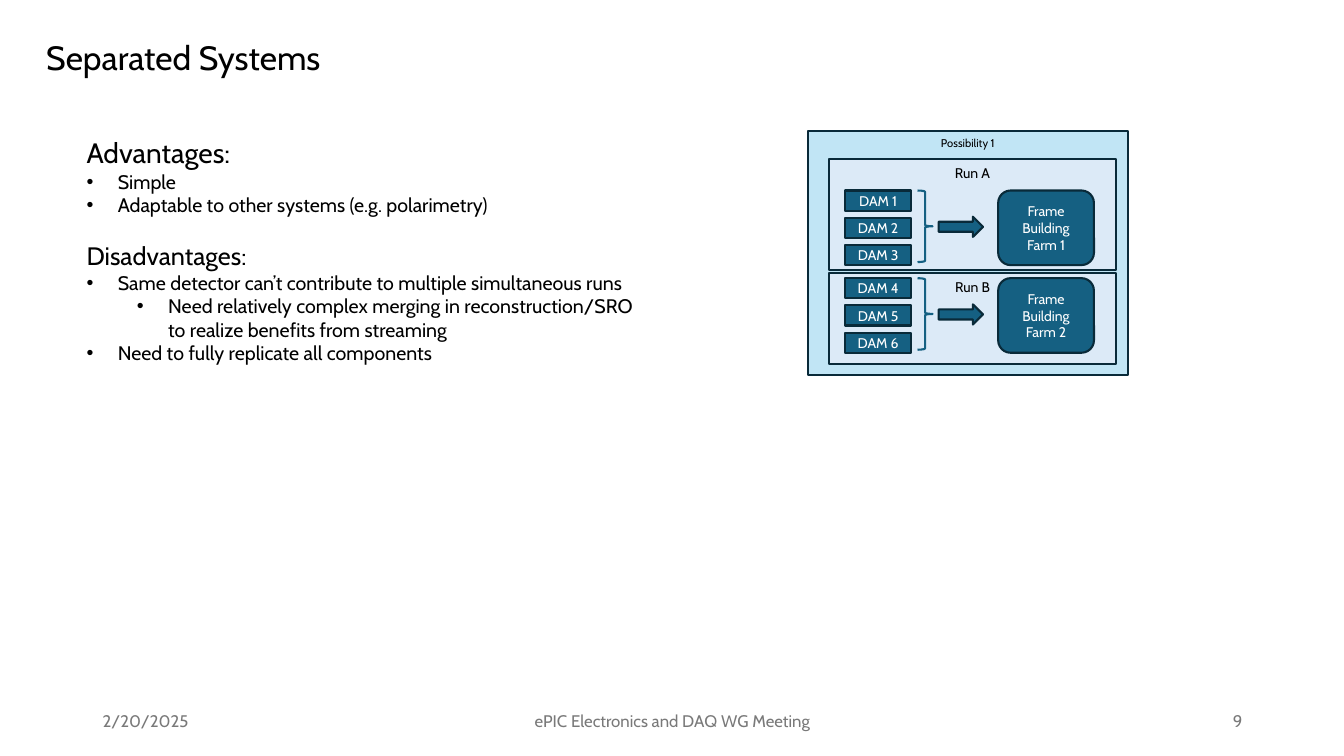
from pptx import Presentation
from pptx.dml.color import RGBColor
from pptx.enum.shapes import MSO_SHAPE
from pptx.enum.text import MSO_ANCHOR, PP_ALIGN
from pptx.oxml.ns import qn
from pptx.util import Pt
from lxml.etree import SubElement

PX = 9144  # EMU, 100 px to the inch
FONT = "Cabin"
BLACK = RGBColor(0x00, 0x00, 0x00)
WHITE = RGBColor(0xFF, 0xFF, 0xFF)
GREY = RGBColor(0x79, 0x79, 0x79)
SKY = RGBColor(0xC1, 0xE5, 0xF5)
PALE = RGBColor(0xDC, 0xEA, 0xF7)
TEAL = RGBColor(0x15, 0x60, 0x82)
NAVY = RGBColor(0x09, 0x2A, 0x39)

# text, size, bullet level (None for a heading), space before
POINTS = [
    ("Advantages:", 20, None, 0),
    ("Simple", 14, 0, 0),
    ("Adaptable to other systems (e.g. polarimetry)", 14, 0, 0),
    ("Disadvantages:", 18, None, 17),
    ("Same detector can’t contribute to multiple simultaneous runs", 14, 0, 0),
    ("Need relatively complex merging in reconstruction/SRO "
     "to realize benefits from streaming", 14, 1, 0),
    ("Need to fully replicate all components", 14, 0, 0),
]


def scale(*lengths):
    return [length * PX for length in lengths]


def style(para, size, color, align=PP_ALIGN.LEFT):
    para.alignment = align
    for run in para.runs:
        run.font.name = FONT
        run.font.size = Pt(size)
        run.font.color.rgb = color


def add_label(slide, box, text, size, color=BLACK, align=PP_ALIGN.LEFT,
              anchor=MSO_ANCHOR.TOP):
    frame = slide.shapes.add_textbox(*scale(*box)).text_frame
    frame.word_wrap = True
    frame.vertical_anchor = anchor
    frame.text = text
    style(frame.paragraphs[0], size, color, align)


def add_block(slide, kind, box, fill, line=NAVY):
    shape = slide.shapes.add_shape(kind, *scale(*box))
    shape.shadow.inherit = False
    if fill is None:
        shape.fill.background()
    else:
        shape.fill.solid()
        shape.fill.fore_color.rgb = fill
    shape.line.color.rgb = line
    shape.line.width = Pt(1.5)
    return shape


def add_panel(slide, box, fill, text, size):
    """Add a light rectangle with its caption at the top."""
    frame = add_block(slide, MSO_SHAPE.RECTANGLE, box, fill).text_frame
    frame.vertical_anchor = MSO_ANCHOR.TOP
    frame.text = text
    style(frame.paragraphs[0], size, BLACK, PP_ALIGN.CENTER)


def add_node(slide, kind, box, text):
    """Add a dark box with white centred text."""
    frame = add_block(slide, kind, box, TEAL).text_frame
    frame.word_wrap = True
    frame.vertical_anchor = MSO_ANCHOR.MIDDLE
    frame.text = text
    style(frame.paragraphs[0], 10, WHITE, PP_ALIGN.CENTER)


def add_bullet(para, level):
    para.level = level
    props = para._p.get_or_add_pPr()
    props.set("marL", str((31 + 50 * level) * PX))
    props.set("indent", str(-31 * PX))
    SubElement(props, qn("a:buFont")).set("typeface", "Arial")
    SubElement(props, qn("a:buChar")).set("char", "•")


def add_points(slide, box):
    frame = slide.shapes.add_textbox(*scale(*box)).text_frame
    frame.word_wrap = True
    for index, (text, size, level, gap) in enumerate(POINTS):
        para = frame.add_paragraph() if index else frame.paragraphs[0]
        para.text = text
        if level is not None:
            add_bullet(para, level)
        if gap:
            para.space_before = Pt(gap)
        style(para, size, BLACK)


def add_run(slide, top, farm):
    """Add three DAM boxes that feed one farm through a brace and an arrow."""
    for row in range(3):
        add_node(slide, MSO_SHAPE.RECTANGLE, (838, top + 27 * row, 66, 20),
                 f"DAM {3 * farm - 2 + row}")
    add_block(slide, MSO_SHAPE.RIGHT_ARROW, (931, top + 26, 44, 20), TEAL)
    add_node(slide, MSO_SHAPE.ROUNDED_RECTANGLE, (990, top, 95, 74),
             f"Frame Building Farm {farm}")
    add_block(slide, MSO_SHAPE.RIGHT_BRACE, (910, top, 15, 71), None, TEAL)


def add_footer(slide):
    for left, width, text, align in [
        (92, 300, "2/20/2025", PP_ALIGN.LEFT),
        (442, 450, "ePIC Electronics and DAQ WG Meeting", PP_ALIGN.CENTER),
        (942, 300, "9", PP_ALIGN.RIGHT),
    ]:
        add_label(slide, (left, 695, width, 40), text, 12, GREY, align,
                  MSO_ANCHOR.MIDDLE)


def main():
    deck = Presentation()
    deck.slide_width, deck.slide_height = scale(1333, 750)
    slide = deck.slides.add_slide(deck.slide_layouts[6])
    add_label(slide, (36, 32, 896, 50), "Separated Systems", 24)
    add_points(slide, (76, 130, 571, 310))
    add_panel(slide, (801, 130, 318, 242), SKY, "Possibility 1", 8)
    add_panel(slide, (822, 271, 285, 90), PALE, "Run B", 10)
    add_panel(slide, (822, 158, 285, 110), PALE, "Run A", 10)
    add_run(slide, 189, 1)
    add_run(slide, 276, 2)
    add_footer(slide)
    deck.save("out.pptx")


if __name__ == "__main__":
    main()
